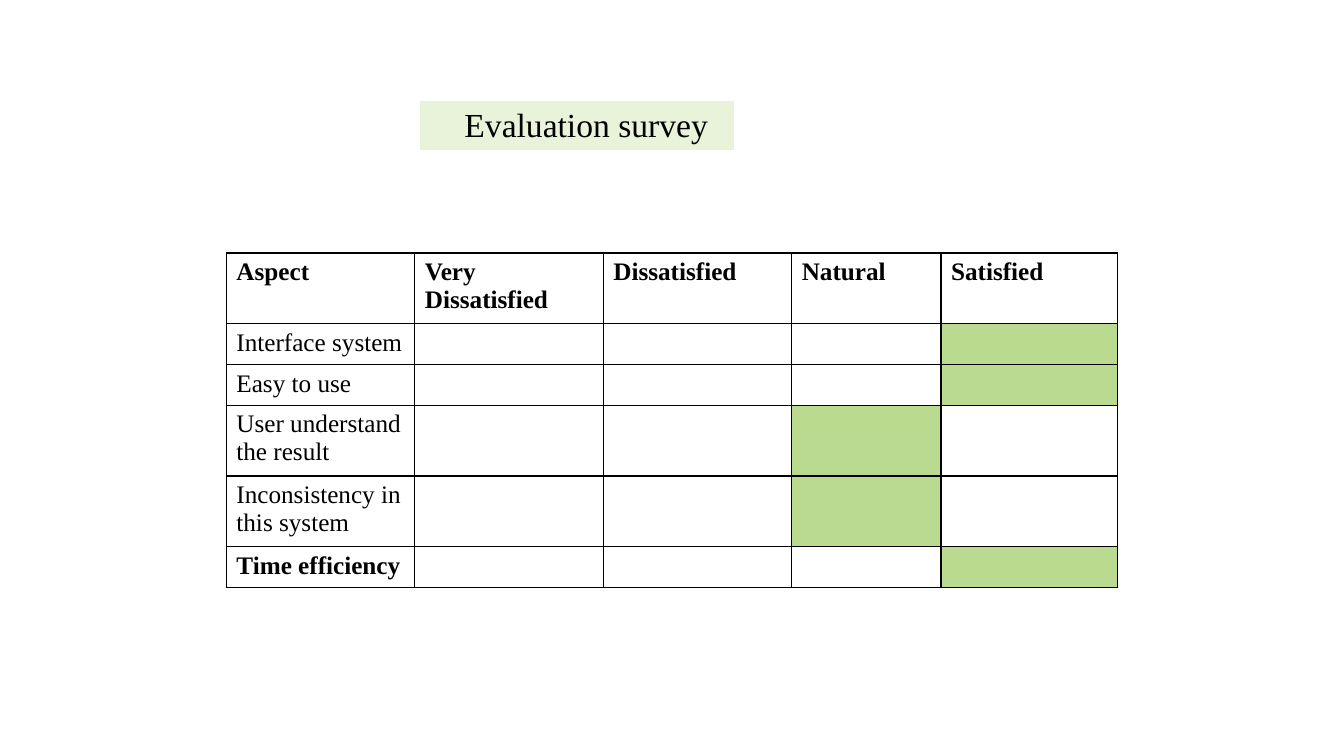
from dataclasses import dataclass

from lxml.etree import SubElement
from pptx import Presentation
from pptx.dml.color import RGBColor
from pptx.enum.shapes import MSO_SHAPE
from pptx.enum.text import MSO_ANCHOR
from pptx.oxml.ns import qn
from pptx.slide import Slide
from pptx.table import _Cell
from pptx.text.text import TextFrame
from pptx.util import Pt

BLACK = "000000"
WHITE = "FFFFFF"
PALE_GREEN = "E8F3DA"
GREEN = "B9DA8F"
FONT_NAME = "Times New Roman"

RATINGS = ["Very Dissatisfied", "Dissatisfied", "Natural", "Satisfied"]
COLUMN_WIDTHS = [134.64, 134.64, 134.64, 106.6, 126]
HEADER_HEIGHT = 47.2


@dataclass(frozen=True)
class Aspect:
    name: str
    rating: str
    height: float
    bold: bool = False


ASPECTS = [
    Aspect("Interface system", "Satisfied", 29.2),
    Aspect("Easy to use", "Satisfied", 29.2),
    Aspect("User understand the result", "Natural", 47.2),
    Aspect("Inconsistency in this system", "Natural", 47.2),
    Aspect("Time efficiency", "Satisfied", 29.2, bold=True),
]


def color(value: str) -> RGBColor:
    return RGBColor.from_string(value)


def write_text(frame: TextFrame, text: str, *, size: float = 18,
               bold: bool = False, line_spacing: float = 1.0) -> None:
    paragraph = frame.paragraphs[0]
    paragraph.line_spacing = line_spacing
    run = paragraph.add_run()
    run.text = text
    run.font.name = FONT_NAME
    run.font.size = Pt(size)
    run.font.bold = bold
    run.font.color.rgb = color(BLACK)


def format_cell(cell: _Cell, fill: str) -> None:
    properties = cell._tc.get_or_add_tcPr()
    for side in ("a:lnL", "a:lnR", "a:lnT", "a:lnB"):
        border = SubElement(properties, qn(side), w=str(Pt(1)))
        solid_fill = SubElement(border, qn("a:solidFill"))
        SubElement(solid_fill, qn("a:srgbClr"), val=BLACK)
    cell.fill.solid()
    cell.fill.fore_color.rgb = color(fill)


def add_title(slide: Slide) -> None:
    band = slide.shapes.add_shape(
        MSO_SHAPE.RECTANGLE, Pt(299.5), Pt(71.3), Pt(225.4), Pt(36.7))
    band.shadow.inherit = False
    band.fill.solid()
    band.fill.fore_color.rgb = color(PALE_GREEN)
    band.line.color.rgb = color(WHITE)
    band.line.width = Pt(1)

    title = slide.shapes.add_textbox(Pt(324.7), Pt(75.6), Pt(206.6), Pt(30.2))
    title.text_frame.word_wrap = True
    title.text_frame.vertical_anchor = MSO_ANCHOR.MIDDLE
    write_text(title.text_frame, "Evaluation survey", size=24, line_spacing=0.9)


def add_survey_table(slide: Slide) -> None:
    heights = [HEADER_HEIGHT] + [aspect.height for aspect in ASPECTS]
    table = slide.shapes.add_table(
        len(heights), len(COLUMN_WIDTHS), Pt(161.7), Pt(180.7),
        Pt(sum(COLUMN_WIDTHS)), Pt(sum(heights))).table
    for column, width in zip(table.columns, COLUMN_WIDTHS):
        column.width = Pt(width)
    for row, height in zip(table.rows, heights):
        row.height = Pt(height)

    for column_index, heading in enumerate(["Aspect"] + RATINGS):
        cell = table.cell(0, column_index)
        format_cell(cell, WHITE)
        write_text(cell.text_frame, heading, bold=True)

    for row_index, aspect in enumerate(ASPECTS, start=1):
        name_cell = table.cell(row_index, 0)
        format_cell(name_cell, WHITE)
        write_text(name_cell.text_frame, aspect.name, bold=aspect.bold)
        for column_index, rating in enumerate(RATINGS, start=1):
            fill = GREEN if rating == aspect.rating else WHITE
            format_cell(table.cell(row_index, column_index), fill)


def main() -> None:
    presentation = Presentation()
    presentation.slide_width = Pt(960)
    presentation.slide_height = Pt(540)
    slide = presentation.slides.add_slide(presentation.slide_layouts[6])
    add_title(slide)
    add_survey_table(slide)
    presentation.save("out.pptx")


if __name__ == "__main__":
    main()
